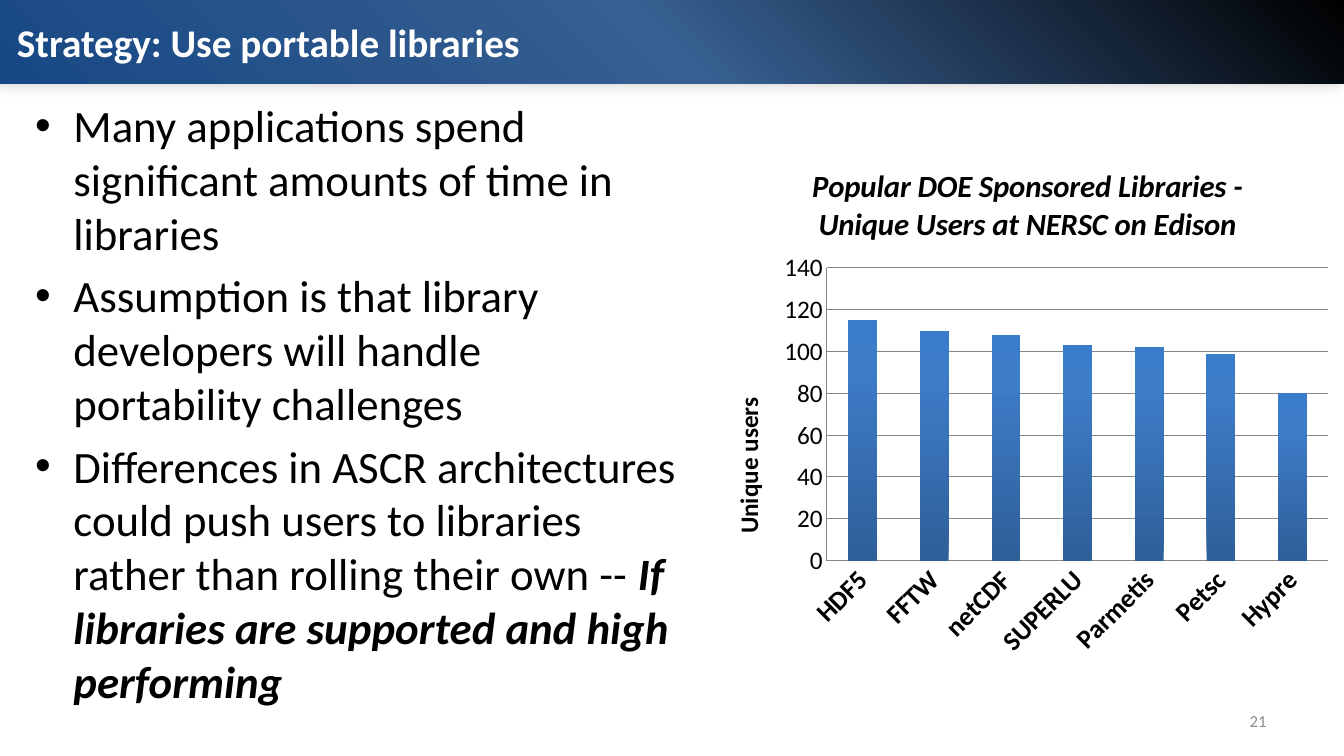
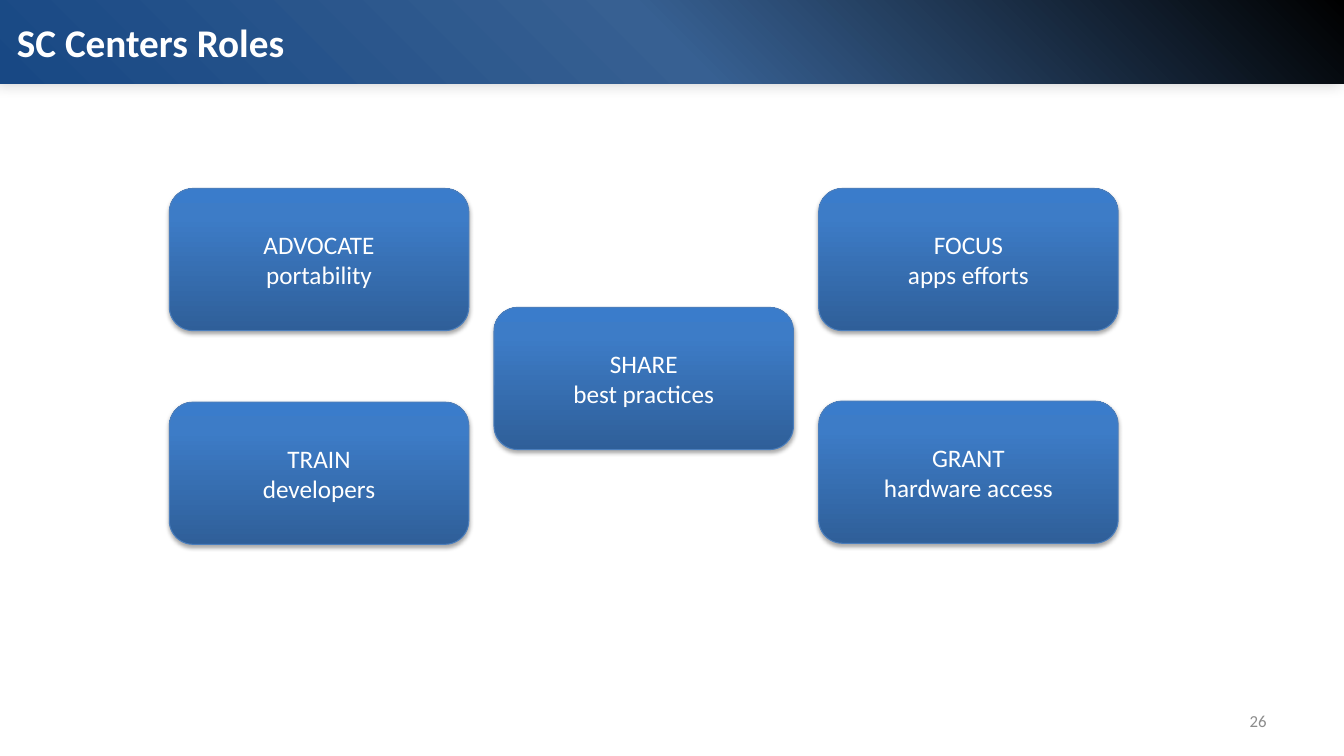
from pptx import Presentation
from pptx.chart.data import CategoryChartData
from pptx.dml.color import RGBColor
from pptx.enum.chart import XL_CHART_TYPE, XL_TICK_MARK
from pptx.enum.shapes import MSO_SHAPE
from pptx.enum.text import MSO_ANCHOR, PP_ALIGN
from pptx.oxml import parse_xml
from pptx.oxml.ns import nsdecls, qn
from pptx.util import Inches, Pt

RECT, ROUNDED = MSO_SHAPE.RECTANGLE, MSO_SHAPE.ROUNDED_RECTANGLE
COLUMNS, NO_TICKS = XL_CHART_TYPE.COLUMN_CLUSTERED, XL_TICK_MARK.NONE
TOP, MIDDLE = MSO_ANCHOR.TOP, MSO_ANCHOR.MIDDLE
LEFT, CENTER, RIGHT = PP_ALIGN.LEFT, PP_ALIGN.CENTER, PP_ALIGN.RIGHT

FONT = "Calibri"
BLACK = RGBColor(0x00, 0x00, 0x00)
WHITE = RGBColor(0xFF, 0xFF, 0xFF)
NUMBER_GREY = RGBColor(0x8C, 0x8C, 0x8C)
GRID_GREY = RGBColor(0x86, 0x86, 0x86)
BOX_EDGE = RGBColor(0x4B, 0x7E, 0xBC)
NAVY = RGBColor(0x18, 0x48, 0x84)
STEEL = RGBColor(0x37, 0x60, 0x92)
DEEP_BLUE = RGBColor(0x2F, 0x5F, 0x99)
MID_BLUE = RGBColor(0x3D, 0x7C, 0xC7)
BRIGHT_BLUE = RGBColor(0x3A, 0x7C, 0xCB)

# Each gradient: stops (percent, colour) and clockwise angle in degrees
BAND_GRADIENT = ([(0, BLACK), (50, STEEL), (100, NAVY)], 135)
BLUE_GRADIENT = ([(0, DEEP_BLUE), (80, MID_BLUE), (100, BRIGHT_BLUE)], 270)


def set_gradient(fill, sp_pr, gradient, shadow=None):
    """Fill with a multi-stop gradient; shadow is (opacity %, blur pt, distance pt, angle)."""
    stops, angle = gradient
    fill.gradient()
    gs = "".join(f'<a:gs pos="{pos * 1000}"><a:srgbClr val="{color}"/></a:gs>' for pos, color in stops)
    sp_pr.replace(sp_pr.find(qn("a:gradFill")), parse_xml(
        f'<a:gradFill {nsdecls("a")} rotWithShape="1"><a:gsLst>{gs}</a:gsLst>'
        f'<a:lin ang="{angle * 60000}" scaled="0"/></a:gradFill>'))
    if shadow:
        opacity, blur, distance, direction = shadow
        sp_pr.find(qn("a:effectLst")).append(parse_xml(
            f'<a:outerShdw {nsdecls("a")} blurRad="{Pt(blur)}" dist="{Pt(distance)}" '
            f'dir="{direction * 60000}" rotWithShape="0"><a:srgbClr val="000000">'
            f'<a:alpha val="{opacity * 1000}"/></a:srgbClr></a:outerShdw>'))


def write_text(sp, paragraphs, size, color, align=LEFT, anchor=MIDDLE, bold=None, bullet=False):
    """Write paragraphs, each a list of (text, emphasised) runs."""
    tf = sp.text_frame
    tf.word_wrap = True
    tf.vertical_anchor = anchor
    for i, runs in enumerate(paragraphs):
        p = tf.paragraphs[0] if i == 0 else tf.add_paragraph()
        p.alignment = align
        if bullet:
            p_pr = p._p.get_or_add_pPr()
            p_pr.set("marL", str(Inches(0.38)))
            p_pr.set("indent", str(-Inches(0.38)))
            p_pr.append(parse_xml(f'<a:buFont {nsdecls("a")} typeface="Arial"/>'))
            p_pr.append(parse_xml(f'<a:buChar {nsdecls("a")} char="•"/>'))
            if i:
                p.space_before = Pt(6.4)
        p.font.name, p.font.size, p.font.bold = FONT, Pt(size), bold
        p.font.color.rgb = color
        for text, emphasised in runs:
            r = p.add_run()
            r.text = text
            if emphasised:
                r.font.bold = r.font.italic = True


prs = Presentation()
prs.slide_width, prs.slide_height = Inches(13.33), Inches(7.5)

# Shared frame: band, title and slide number
slides = []
for title, number in [("Strategy: Use portable libraries", "21"), ("SC Centers Roles", "26")]:
    s = prs.slides.add_slide(prs.slide_layouts[6])
    band = s.shapes.add_shape(RECT, 0, 0, prs.slide_width, Inches(0.83))
    band.shadow.inherit = False
    band.line.fill.background()
    set_gradient(band.fill, band._element.spPr, BAND_GRADIENT, (20, 10, 3, 180))
    sp = s.shapes.add_textbox(Inches(0.07), Inches(0.02), Inches(12), Inches(0.78))
    write_text(sp, [[(title, False)]], 28, WHITE, bold=True)
    sp = s.shapes.add_textbox(Inches(9.55), Inches(6.95), Inches(3.11), Inches(0.4))
    write_text(sp, [[(number, False)]], 12, NUMBER_GREY, RIGHT)
    slides.append(s)
libraries_slide, roles_slide = slides

# Portable libraries: bullets
sp = libraries_slide.shapes.add_textbox(Inches(0.25), Inches(0.92), Inches(6.58), Inches(6.08))
write_text(sp, [
    [("Many applications spend significant amounts of time in libraries", False)],
    [("Assumption is that library developers will handle portability challenges", False)],
    [("Differences in ASCR architectures could push users to libraries "
      "rather than rolling their own -- ", False),
     ("If libraries are supported and high performing", True)],
], 32, BLACK, anchor=TOP, bullet=True)

# Portable libraries: chart
data = CategoryChartData()
data.categories = ["HDF5", "FFTW", "netCDF", "SUPERLU", "Parmetis", "Petsc", "Hypre"]
data.add_series("Series 1", [115, 110, 108, 103, 102, 99, 80])
chart = libraries_slide.shapes.add_chart(
    COLUMNS, Inches(7.08), Inches(1.42), Inches(6.22), Inches(5.38), data).chart
chart.has_legend = False
chart.font.name, chart.font.size = FONT, Pt(18)
chart.font.color.rgb = BLACK

plot = chart.plots[0]
plot.gap_width = 150
plot.vary_by_categories = False
series = plot.series[0]
set_gradient(series.format.fill, series._element.spPr, BLUE_GRADIENT)

cat_axis, val_axis = chart.category_axis, chart.value_axis
for axis in (cat_axis, val_axis):
    axis.major_tick_mark = axis.minor_tick_mark = NO_TICKS
    axis.format.line.color.rgb = GRID_GREY
cat_axis.tick_labels.font.size = Pt(19)
cat_axis.tick_labels.font.bold = True
cat_axis._element.txPr.find(qn("a:bodyPr")).set("rot", str(-45 * 60000))
val_axis.minimum_scale, val_axis.maximum_scale, val_axis.major_unit = 0, 140, 20
val_axis.has_major_gridlines = True
val_axis.major_gridlines.format.line.color.rgb = GRID_GREY

for owner, text, size, italic in [
    (chart.chart_title, "Popular DOE Sponsored Libraries - Unique Users at NERSC on Edison", 22, True),
    (val_axis.axis_title, "Unique users", 18, False),
]:
    owner.text_frame.text = text
    p = owner.text_frame.paragraphs[0]
    p.font.name, p.font.size, p.font.bold, p.font.italic = FONT, Pt(size), True, italic
    p.font.color.rgb = BLACK
chart.chart_title.include_in_layout = False
val_axis.axis_title.text_frame._txBody.find(qn("a:bodyPr")).set("rot", str(-90 * 60000))

# Manual positions as fractions of the chart; the plot ends high enough for the slanted labels
for parent, index, target, places in [
    (chart._chartSpace.chart.plotArea, 0, '<c:layoutTarget val="inner"/>',
     {"x": 0.18, "y": 0.23, "w": 0.8, "h": 0.54}),
    (val_axis.axis_title._element, 1, "", {"x": 0.02, "y": 0.46}),
]:
    old = parent.find(qn("c:layout"))
    if old is not None:
        parent.remove(old)
    modes = "".join(f'<c:{key}Mode val="edge"/>' for key in "xy")
    values = "".join(f'<c:{key} val="{value}"/>' for key, value in places.items())
    parent.insert(index, parse_xml(
        f'<c:layout {nsdecls("c")}><c:manualLayout>{target}{modes}{values}</c:manualLayout></c:layout>'))

# Roles
for left, top, role, subject in [
    (1.68, 1.87, "ADVOCATE", "portability"),
    (1.68, 3.99, "TRAIN", "developers"),
    (8.12, 3.98, "GRANT", "hardware access"),
    (8.12, 1.87, "FOCUS", "apps efforts"),
    (4.9, 3.05, "SHARE", "best practices"),
]:
    box = roles_slide.shapes.add_shape(ROUNDED, Inches(left), Inches(top), Inches(2.97), Inches(1.41))
    box.shadow.inherit = False
    box.line.color.rgb = BOX_EDGE
    box.line.width = Pt(0.75)
    set_gradient(box.fill, box._element.spPr, BLUE_GRADIENT, (35, 3.1, 1.8, 90))
    write_text(box, [[(role, False)], [(subject, False)]], 18, WHITE, CENTER)

prs.save("out.pptx")
